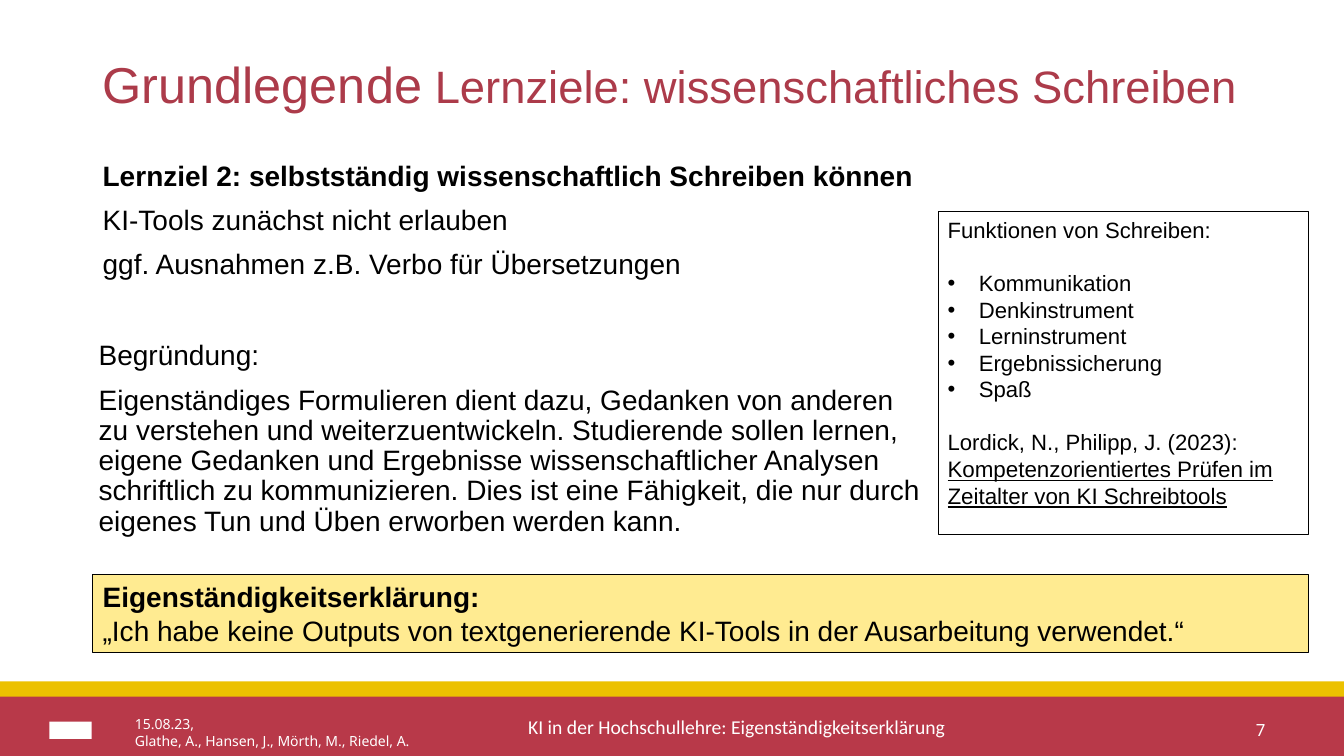
"""Builds the slide on learning goals for academic writing."""
from lxml.etree import SubElement as Sub
from pptx import Presentation
from pptx.dml.color import RGBColor as Rgb
from pptx.enum.shapes import MSO_SHAPE as Shape
from pptx.enum.text import MSO_ANCHOR as Anchor, PP_ALIGN as Align
from pptx.oxml.ns import qn
from pptx.util import Inches, Pt

COLORS = {
    "gold": "ECC100",
    "red": "B83949",
    "title": "AC3B4A",
    "cream": "FFEB91",
    "black": "000000",
    "white": "FFFFFF",
}


class Deck:
    def __init__(self):
        self.prs = Presentation()
        self.prs.slide_width = Inches(13.33)
        self.prs.slide_height = Inches(7.5)
        self.slide = self.prs.slides.add_slide(self.prs.slide_layouts[6])

    def color(self, name):
        return Rgb.from_string(COLORS[name])

    def box(self, at, fill=None, line=None):
        box = self.slide.shapes.add_shape(Shape.RECTANGLE, *map(Inches, at))
        box.shadow.inherit = False
        if fill:
            box.fill.solid()
            box.fill.fore_color.rgb = self.color(fill)
        else:
            box.fill.background()
        if line:
            box.line.color.rgb = self.color("black")
            box.line.width = Pt(line)
        else:
            box.line.fill.background()
        return box

    def style(self, run, size, color="black", face="Arial", bold=False):
        font = run.font
        font.size, font.name, font.bold = Pt(size), face, bold
        font.color.rgb = self.color(color)

    def label(self, shape, text, size, color="black", face="Arial",
              anchor=Anchor.TOP, align=Align.LEFT, space=None, before=None):
        frame = shape.text_frame
        frame.text = text
        frame.word_wrap = True
        frame.vertical_anchor = anchor
        for para in frame.paragraphs:
            para.alignment = align
            if space:
                para.line_spacing = space
            if before:
                para.space_before = Pt(before)
            for run in para.runs:
                self.style(run, size, color, face)
        return frame.paragraphs

    def text(self, at, text, size, **look):
        area = self.slide.shapes.add_textbox(*map(Inches, at))
        return self.label(area, text, size, **look)

    def bullet(self, para):
        props = para._p.get_or_add_pPr()
        props.set("marL", str(Inches(0.31)))
        props.set("indent", str(-Inches(0.31)))
        Sub(props, qn("a:buFont"), typeface="Arial")
        Sub(props, qn("a:buChar"), char="•")


def main():
    deck = Deck()
    for top, fill in ((6.76, "gold"), (6.91, "red")):
        deck.box((0, top, 13.33, 0.59), fill)
    deck.box((0.49, 7.16, 0.42, 0.17), "white")

    foot = {"color": "white", "face": "Noto Sans", "anchor": Anchor.MIDDLE}
    deck.text((5.14, 7.04, 4.42, 0.34),
              "KI in der Hochschullehre: Eigenständigkeitserklärung",
              14, color="white", face="Calibri")
    deck.text((9.65, 7.04, 3, 0.4), "7", 12, align=Align.RIGHT, **foot)
    deck.text((1.24, 7.07, 3.2, 0.4),
              "15.08.23,\nGlathe, A., Hansen, J., Mörth, M., Riedel, A.",
              10, **foot)

    title = deck.text((0.92, 0.4, 11.5, 0.92), "Grundlegende", 36,
                      color="title", anchor=Anchor.MIDDLE, space=0.9)[0]
    rest = title.add_run()
    rest.text = " Lernziele: wissenschaftliches Schreiben"
    deck.style(rest, 32.4, "title")

    body = {"space": 0.9, "before": 10}
    goal = deck.text(
        (0.92, 1.56, 11.5, 1.6),
        "Lernziel 2: selbstständig wissenschaftlich Schreiben können\n"
        "KI-Tools zunächst nicht erlauben\n"
        "ggf. Ausnahmen z.B. Verbo für Übersetzungen", 20, **body)
    goal[0].runs[0].font.bold = True
    deck.text(
        (0.88, 3.34, 8.38, 2.36),
        "Begründung:\n"
        "Eigenständiges Formulieren dient dazu, Gedanken von anderen zu "
        "verstehen und weiterzuentwickeln. Studierende sollen lernen, eigene "
        "Gedanken und Ergebnisse wissenschaftlicher Analysen schriftlich zu "
        "kommunizieren. Dies ist eine Fähigkeit, die nur durch eigenes Tun "
        "und Üben erworben werden kann.", 20, **body)

    pledge = deck.label(
        deck.box((0.92, 5.7, 12.06, 0.77), "cream", 0.75),
        "Eigenständigkeitserklärung:\n"
        "„Ich habe keine Outputs von textgenerierende KI-Tools in der "
        "Ausarbeitung verwendet.“", 20)
    pledge[0].runs[0].font.bold = True

    roles = deck.label(
        deck.box((9.3, 2.1, 3.68, 3.2), line=0.25),
        "Funktionen von Schreiben:\nKommunikation\nDenkinstrument\n"
        "Lerninstrument\nErgebnissicherung\nSpaß\n"
        "Lordick, N., Philipp, J. (2023): ", 15.8)
    for para in (roles[1], roles[-1]):
        para.space_before = Pt(19)
    for para in roles[1:-1]:
        deck.bullet(para)
    work = roles[-1].add_run()
    work.text = "Kompetenzorientiertes Prüfen im Zeitalter von KI Schreibtools"
    deck.style(work, 16)
    work.font.underline = True

    deck.prs.save("out.pptx")


if __name__ == "__main__":
    main()
